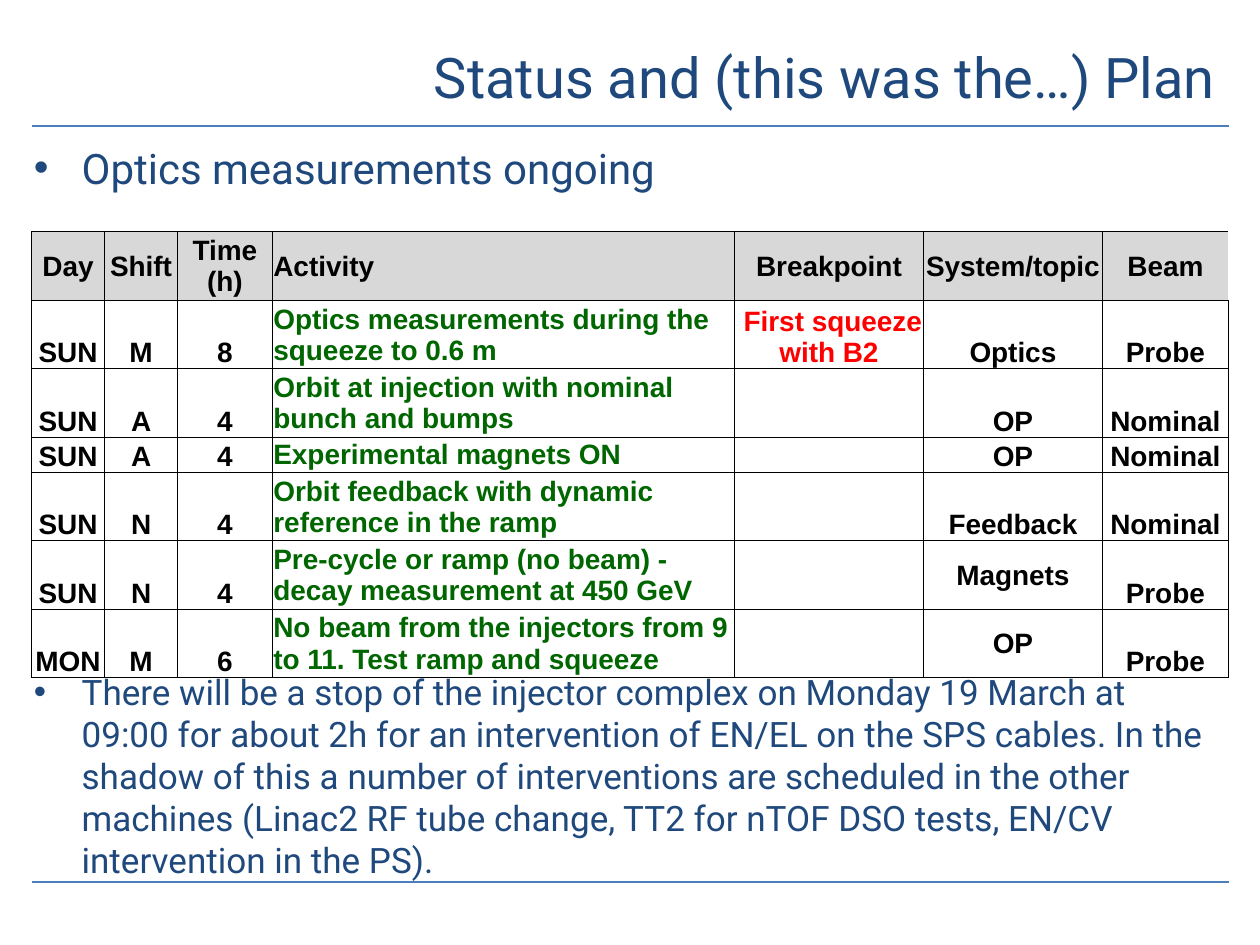
"""Build the status and plan slide with its shift table."""
from pptx import Presentation
from pptx.dml.color import RGBColor
from pptx.enum.shapes import MSO_CONNECTOR
from pptx.enum.text import MSO_ANCHOR, PP_ALIGN
from pptx.oxml.ns import qn
from pptx.util import Inches, Pt
from lxml import etree

STRAIGHT = MSO_CONNECTOR.STRAIGHT
MIDDLE, BOTTOM = MSO_ANCHOR.MIDDLE, MSO_ANCHOR.BOTTOM
LEFT, CENTER, RIGHT = PP_ALIGN.LEFT, PP_ALIGN.CENTER, PP_ALIGN.RIGHT
NAVY = RGBColor(0x1F, 0x49, 0x7D)
BLUE = RGBColor(0x4B, 0x7E, 0xBC)
GREY = RGBColor(0xD8, 0xD8, 0xD8)
WHITE = RGBColor(0xFF, 0xFF, 0xFF)
BLACK = RGBColor(0, 0, 0)
GREEN = RGBColor(0, 0x66, 0)
RED = RGBColor(0xFF, 0, 0)

TITLE = "Status and (this was the…) Plan"
BULLETS = [
    ("Optics measurements ongoing", 24, 1.08, 0.5),
    ("There will be a stop of the injector complex on Monday 19 March at "
     "09:00 for about 2h for an intervention of EN/EL on the SPS cables. In the "
     "shadow of this a number of interventions are scheduled in the other "
     "machines (Linac2 RF tube change, TT2 for nTOF DSO tests, EN/CV "
     "intervention in the PS).", 20, 5.27, 1.7),
]
RULE_TOPS = [1, 7]
HEADER = ["Day", "Shift", "Time (h)", "Activity", "Breakpoint", "System/topic", "Beam"]
SHIFTS = [
    ("SUN", "M", "8", "Optics measurements during the squeeze to 0.6 m",
     " First squeeze with B2", "Optics", "Probe"),
    ("SUN", "A", "4", "Orbit at injection with nominal bunch and bumps", "", "OP", "Nominal"),
    ("SUN", "A", "4", "Experimental magnets ON", "", "OP", "Nominal"),
    ("SUN", "N", "4", "Orbit feedback with dynamic reference in the ramp",
     "", "Feedback", "Nominal"),
    ("SUN", "N", "4", "Pre-cycle or ramp (no beam) - decay measurement at 450 GeV",
     "", "Magnets", "Probe"),
    ("MON", "M", "6", "No beam from the injectors from 9 to 11. Test ramp and squeeze",
     "", "OP", "Probe"),
]
COLUMN_WIDTHS = [0.58, 0.58, 0.75, 3.67, 1.5, 1.42, 1]
ROW_HEIGHTS = [0.21, 0.24, 0.24, 0.24, 0.24, 0.22, 0.22]
ACTIVITY, BREAKPOINT, SYSTEM = 3, 4, 5
MIDDLE_SYSTEM_ROWS = (5, 6)
TEXT_COLORS = {ACTIVITY: GREEN, BREAKPOINT: RED}


def write(frame, text, size=16, font="Roboto", color=NAVY, bold=False,
          align=LEFT, bullet=False):
    frame.word_wrap = True
    para = frame.paragraphs[0]
    if bullet:
        properties = para._p.get_or_add_pPr()
        properties.set("marL", str(Inches(0.38)))
        properties.set("indent", str(-Inches(0.38)))
        etree.SubElement(properties, qn("a:buFont"), typeface="Arial")
        etree.SubElement(properties, qn("a:buChar"), char="•")
    para.alignment = align
    if not text:
        ending = etree.SubElement(para._p, qn("a:endParaRPr"), sz=str(size * 100))
        etree.SubElement(ending, qn("a:latin"), typeface=font)
        return
    span = para.add_run()
    span.text = text
    span.font.size = Pt(size)
    span.font.name = font
    span.font.bold = bold
    span.font.color.rgb = color


def add_rule(page, top):
    rule = page.shapes.add_connector(
        STRAIGHT, Inches(0.25), Inches(top), Inches(9.75), Inches(top))
    rule.line.color.rgb = BLUE
    rule.line.width = Pt(1.5)
    etree.SubElement(rule._element.spPr, qn("a:effectLst"))


def draw_borders(cell, open_right=False):
    properties = cell._tc.get_or_add_tcPr()
    for side in ("L", "R", "T", "B"):
        border = etree.SubElement(properties, qn(f"a:ln{side}"), w=str(Pt(0.5)))
        if side == "R" and open_right:
            etree.SubElement(border, qn("a:noFill"))
        else:
            fill = etree.SubElement(border, qn("a:solidFill"))
            etree.SubElement(fill, qn("a:srgbClr"), val=str(BLACK))


def format_cell(cell, text, row, column):
    is_header = row == 0
    draw_borders(cell, open_right=is_header and column == len(HEADER) - 1)
    if is_header or column >= ACTIVITY:
        cell.fill.solid()
        cell.fill.fore_color.rgb = GREY if is_header else WHITE
    else:
        cell.fill.background()
    cell.margin_left = cell.margin_right = cell.margin_top = Inches(0.01)
    cell.margin_bottom = 0
    in_middle = (is_header or column == ACTIVITY
                 or (column == SYSTEM and row in MIDDLE_SYSTEM_ROWS))
    cell.vertical_anchor = MIDDLE if in_middle else BOTTOM
    color = BLACK if is_header else TEXT_COLORS.get(column, BLACK)
    write(cell.text_frame, text, font="Arial", color=color, bold=True,
          align=LEFT if column == ACTIVITY else CENTER)


def add_shift_table(page):
    rows = [HEADER, *SHIFTS]
    table = page.shapes.add_table(
        len(rows), len(HEADER), Inches(0.25), Inches(1.84),
        Inches(sum(COLUMN_WIDTHS)), Inches(sum(ROW_HEIGHTS))).table
    table.first_row = table.horz_banding = False
    for column, width in zip(table.columns, COLUMN_WIDTHS):
        column.width = Inches(width)
    for row, height in zip(table.rows, ROW_HEIGHTS):
        row.height = Inches(height)
    for row, texts in enumerate(rows):
        for column, text in enumerate(texts):
            format_cell(table.cell(row, column), text, row, column)


def main():
    deck = Presentation()
    deck.slide_width, deck.slide_height = Inches(10), Inches(7.5)
    page = deck.slides.add_slide(deck.slide_layouts[5])
    for top in RULE_TOPS:
        add_rule(page, top)
    title = page.shapes.title
    title.left, title.top = Inches(1.75), Inches(0.17)
    title.width, title.height = Inches(8), Inches(0.87)
    title.text_frame.vertical_anchor = MIDDLE
    write(title.text_frame, TITLE, size=32, align=RIGHT)
    for text, size, top, height in BULLETS:
        box = page.shapes.add_textbox(
            Inches(0.17), Inches(top), Inches(9.5), Inches(height))
        write(box.text_frame, text, size=size, bullet=True)
    add_shift_table(page)
    deck.save("out.pptx")


if __name__ == "__main__":
    main()
